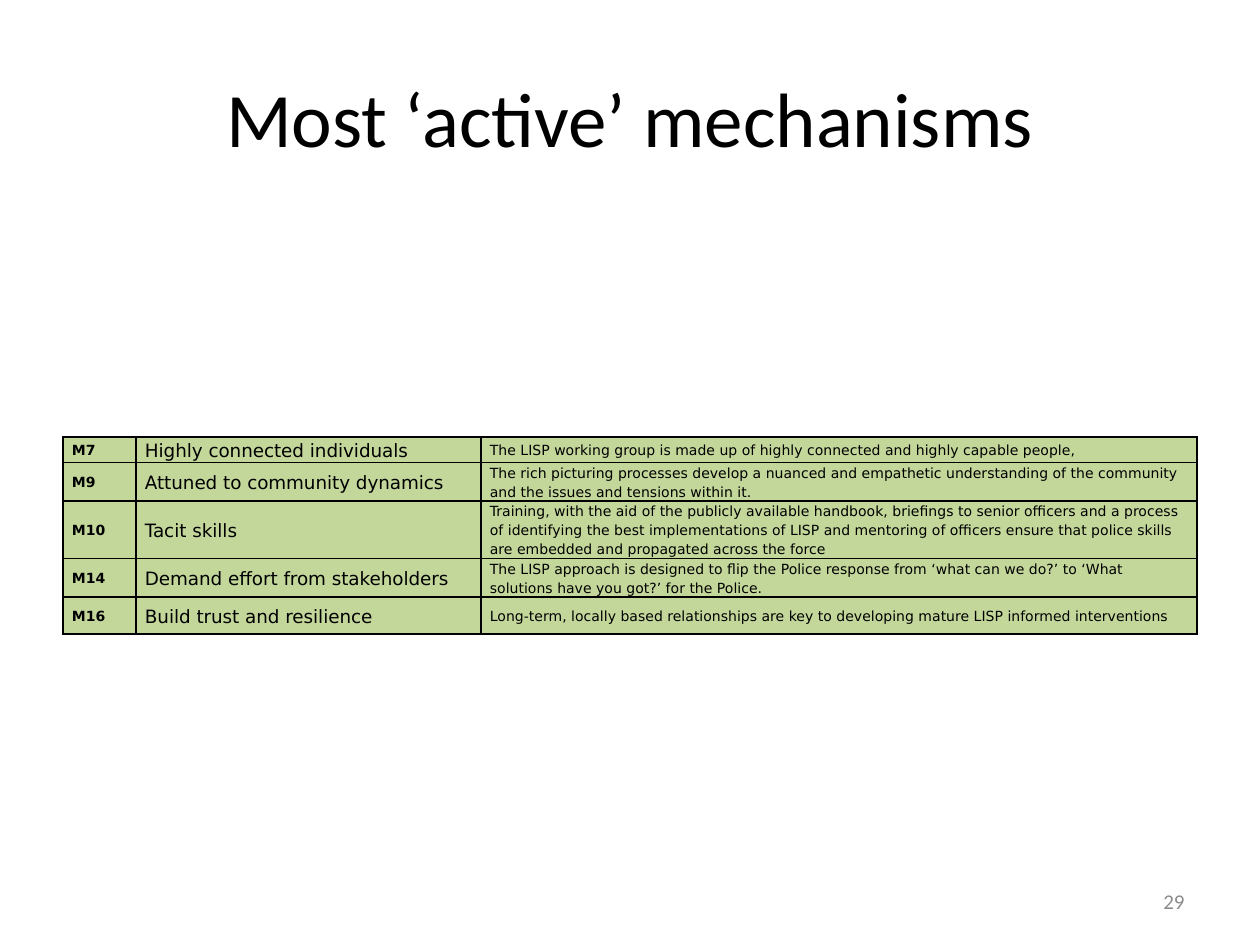
from dataclasses import dataclass

from lxml import etree
from pptx import Presentation, util as u
from pptx.dml.color import RGBColor
from pptx.enum import text as t
from pptx.oxml import ns


@dataclass(frozen=True)
class Theme:
    ink: str = "000000"
    muted: str = "8C8C8C"
    cell: str = "C4D79B"
    heading_font: str = "Calibri"
    table_font: str = "DejaVu Sans"
    title_size: float = 44
    number_size: float = 12
    name_size: float = 10.5
    detail_size: float = 8
    border: float = 1


THEME = Theme()
PX_PER_INCH = 126

MECHANISMS = [
    ("M7", "Highly connected individuals",
     "The LISP working group is made up of highly connected and highly capable people,"),
    ("M9", "Attuned to community dynamics",
     "The rich picturing processes develop a nuanced and empathetic understanding "
     "of the community and the issues and tensions within it."),
    ("M10", "Tacit skills",
     "Training, with the aid of the publicly available handbook, briefings to senior officers "
     "and a process of identifying the best implementations of LISP and mentoring of officers "
     "ensure that police skills are embedded and propagated across the force"),
    ("M14", "Demand effort from stakeholders",
     "The LISP approach is designed to flip the Police response from ‘what can we do?’ "
     "to ‘What solutions have you got?’ for the Police."),
    ("M16", "Build trust and resilience",
     "Long-term, locally based relationships are key to developing mature LISP informed "
     "interventions"),
]
COLUMN_WIDTHS = [73, 345, 716]
ROW_HEIGHTS = [25, 38, 56, 38, 37]
COLUMN_FORMATS = [
    dict(size=THEME.detail_size, bold=True),
    dict(size=THEME.name_size),
    dict(size=THEME.detail_size),
]


def px(length):
    return u.Emu(round(length * u.Inches(1) / PX_PER_INCH))


def write(frame, content, *, size, font, color=THEME.ink, bold=False,
          align=t.PP_ALIGN.LEFT, line_spacing=None, space_before=None):
    frame.word_wrap = True
    paragraph = frame.paragraphs[0]
    paragraph.alignment = align
    paragraph.line_spacing = line_spacing
    paragraph.space_before = space_before
    run = paragraph.add_run()
    run.text = content
    run.font.size = u.Pt(size)
    run.font.name = font
    run.font.bold = bold
    run.font.color.rgb = RGBColor.from_string(color)


def add_text(slide, box, content, **text_format):
    shape = slide.shapes.add_textbox(*map(px, box))
    shape.text_frame.vertical_anchor = t.MSO_ANCHOR.MIDDLE
    write(shape.text_frame, content, font=THEME.heading_font, **text_format)


def add_title(slide, box):
    add_text(slide, box, "Most ‘active’ mechanisms",
             size=THEME.title_size, align=t.PP_ALIGN.CENTER)


def add_page_number(slide, box):
    add_text(slide, box, "29", size=THEME.number_size, color=THEME.muted,
             align=t.PP_ALIGN.RIGHT)


def set_borders(cell):
    properties = cell._tc.get_or_add_tcPr()
    for index, side in enumerate(("lnL", "lnR", "lnT", "lnB")):
        line = etree.Element(ns.qn(f"a:{side}"), w=str(u.Pt(THEME.border)))
        fill = etree.SubElement(line, ns.qn("a:solidFill"))
        etree.SubElement(fill, ns.qn("a:srgbClr"), val=THEME.ink)
        properties.insert(index, line)


def fill_cell(cell, content, **text_format):
    cell.fill.solid()
    cell.fill.fore_color.rgb = RGBColor.from_string(THEME.cell)
    cell.vertical_anchor = t.MSO_ANCHOR.MIDDLE
    cell.margin_left = cell.margin_right = px(9)
    cell.margin_top = cell.margin_bottom = 0
    write(cell.text_frame, content, font=THEME.table_font,
          line_spacing=1.15, space_before=u.Pt(10), **text_format)
    set_borders(cell)


def add_mechanism_table(slide, left, top):
    box = left, top, sum(COLUMN_WIDTHS), sum(ROW_HEIGHTS)
    table = slide.shapes.add_table(
        len(MECHANISMS), len(COLUMN_WIDTHS), *map(px, box)).table
    table.first_row = table.horz_banding = False
    for column, width in zip(table.columns, COLUMN_WIDTHS):
        column.width = px(width)
    for row, height, mechanism in zip(table.rows, ROW_HEIGHTS, MECHANISMS):
        row.height = px(height)
        for cell, content, text_format in zip(row.cells, mechanism, COLUMN_FORMATS):
            fill_cell(cell, content, **text_format)


def main():
    presentation = Presentation()
    presentation.slide_width, presentation.slide_height = px(1260), px(945)
    slide = presentation.slides.add_slide(presentation.slide_layouts[6])
    add_title(slide, (63, 38, 1134, 158))
    add_page_number(slide, (903, 876, 294, 50))
    add_mechanism_table(slide, 63, 437)
    presentation.save("out.pptx")


if __name__ == "__main__":
    main()
